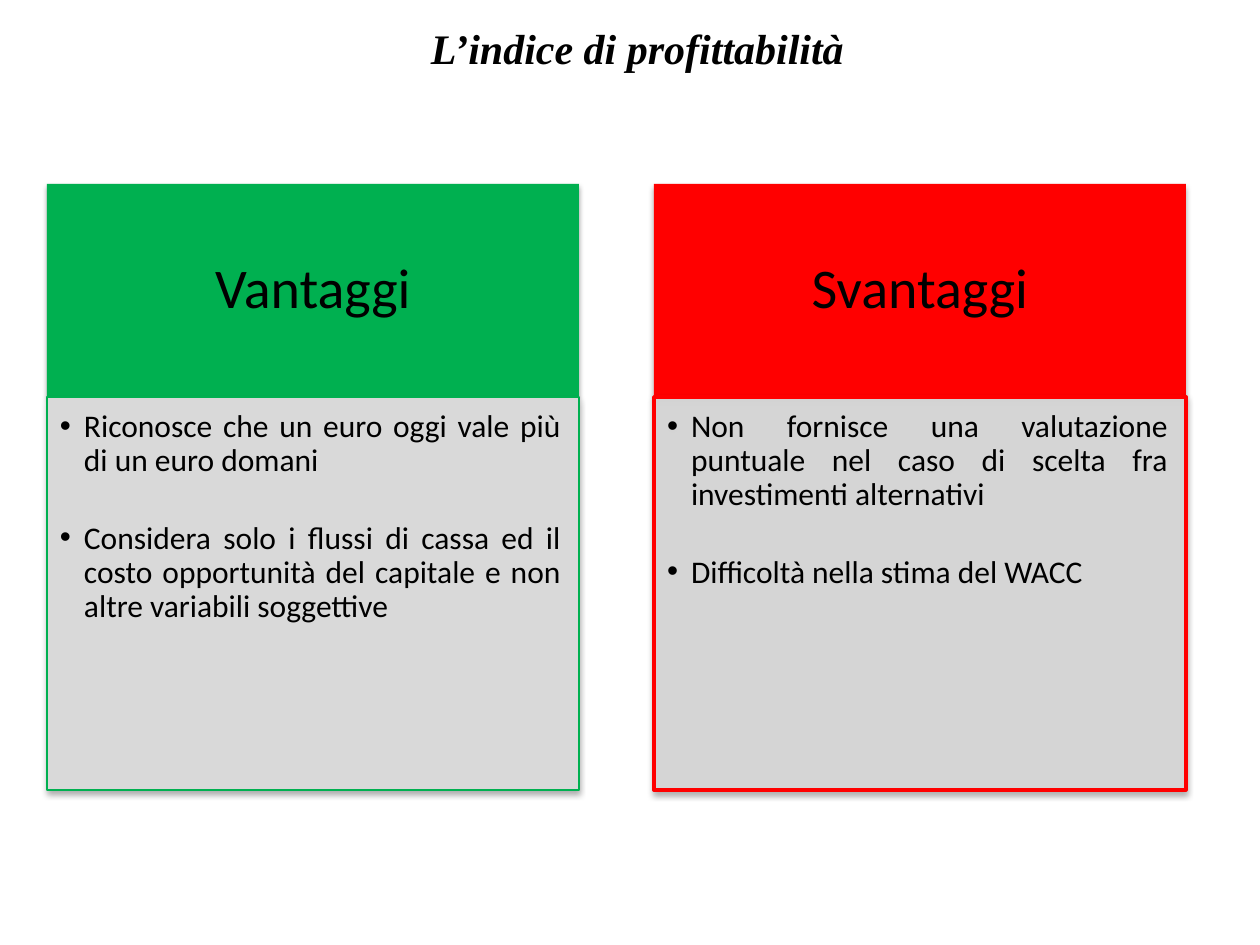
from dataclasses import dataclass
from typing import Any

from lxml import etree
from pptx import Presentation
from pptx.dml.color import RGBColor
from pptx.enum.shapes import MSO_SHAPE
from pptx.enum.text import MSO_ANCHOR, MSO_AUTO_SIZE, PP_ALIGN
from pptx.oxml.ns import qn
from pptx.util import Emu, Pt

RECT = MSO_SHAPE.RECTANGLE
TOP, MIDDLE = MSO_ANCHOR.TOP, MSO_ANCHOR.MIDDLE
CENTER, JUSTIFY = PP_ALIGN.CENTER, PP_ALIGN.JUSTIFY
NO_FIT = MSO_AUTO_SIZE.NONE
SCALE = 914400 / 126


@dataclass(frozen=True)
class Theme:
    ink: str = "000000"
    panel: str = "D9D9D9"
    green: str = "00B050"
    red: str = "FF0000"
    serif: str = "Times New Roman"
    sans: str = "Calibri"
    title: int = 24
    head: int = 32
    body: int = 18


@dataclass(frozen=True)
class Shade:
    alpha: int
    blur: float
    dist: float


@dataclass(frozen=True)
class Column:
    head: str
    items: tuple[str, ...]
    color: str
    line: float
    alpha: int
    shade: Shade


THEME = Theme()
SOFT = Shade(35, 3.1, 1.8)
DEEP = Shade(32, 3.5, 2.2)
LEFT, WIDTH, PITCH = 47, 532, 607
HEAD_TOP, HEAD_TALL, BODY_TALL = 184, 213, 393
HANG = 24
COLUMNS = (
    Column("Vantaggi", (
        "Riconosce che un euro oggi vale più di un euro domani",
        "Considera solo i flussi di cassa ed il costo opportunità del capitale "
        "e non altre variabili soggettive",
    ), THEME.green, 0.75, 100, SOFT),
    Column("Svantaggi", (
        "Non fornisce una valutazione puntuale nel caso di scelta fra "
        "investimenti alternativi",
        "Difficoltà nella stima del WACC",
    ), THEME.red, 2, 90, DEEP),
)


def px(count: int) -> Emu:
    return Emu(round(count * SCALE))


def apply(item: Any, form: dict[str, Any]) -> None:
    for name, value in form.items():
        setattr(item, name, value)


def place(shape: Any, left: int, top: int, width: int, height: int) -> None:
    apply(shape, {"left": px(left), "top": px(top),
                  "width": px(width), "height": px(height)})


def paint(fill: Any, color: str) -> None:
    fill.solid()
    fill.fore_color.rgb = RGBColor.from_string(color)


def shade(shape: Any, look: Shade) -> None:
    shape.shadow.inherit = False
    effect = shape.element.spPr.find(qn("a:effectLst"))
    outer = etree.SubElement(
        effect, qn("a:outerShdw"), blurRad=str(Pt(look.blur)),
        dist=str(Pt(look.dist)), dir="5400000", rotWithShape="0")
    color = etree.SubElement(outer, qn("a:srgbClr"), val=THEME.ink)
    etree.SubElement(color, qn("a:alpha"), val=str(look.alpha * 1000))


def write(shape: Any, lines: tuple[str, ...], font: dict[str, Any],
          para: dict[str, Any], anchor: Any, pad: tuple[int, ...]) -> None:
    frame = shape.text_frame
    sides = ("margin_left", "margin_top", "margin_right", "margin_bottom")
    apply(frame, {"word_wrap": True, "auto_size": NO_FIT,
                  "vertical_anchor": anchor, **dict(zip(sides, map(px, pad)))})
    frame.text = "\n".join(lines)
    for part in frame.paragraphs:
        apply(part, {"space_before": Pt(0), **para})
        run = part.runs[0].font
        apply(run, font)
        run.color.rgb = RGBColor.from_string(THEME.ink)


def bullet(part: Any) -> None:
    props = part._p.get_or_add_pPr()
    props.set("marL", str(px(HANG)))
    props.set("indent", str(-px(HANG)))
    etree.SubElement(props, qn("a:buChar"), char="•")


def draw_head(slide: Any, col: Column, left: int) -> None:
    box = slide.shapes.add_shape(RECT, 0, 0, 0, 0)
    place(box, left, HEAD_TOP, WIDTH, HEAD_TALL)
    paint(box.fill, col.color)
    box.line.fill.background()
    shade(box, col.shade)
    write(box, (col.head,), {"name": THEME.sans, "size": Pt(THEME.head)},
          {"alignment": CENTER, "line_spacing": 0.9}, MIDDLE, (32, 18, 32, 18))


def draw_body(body: Any, col: Column, left: int) -> None:
    body.element.getparent().append(body.element)
    place(body, left, HEAD_TOP + HEAD_TALL, WIDTH, BODY_TALL)
    paint(body.fill, THEME.panel)
    if col.alpha < 100:
        color = body.element.spPr.find(qn("a:solidFill"))[0]
        etree.SubElement(color, qn("a:alpha"), val=str(col.alpha * 1000))
    paint(body.line.fill, col.color)
    body.line.width = Pt(col.line)
    shade(body, DEEP)
    write(body, col.items, {"name": THEME.sans, "size": Pt(THEME.body)},
          {"alignment": JUSTIFY, "line_spacing": 0.9, "space_after": Pt(25)},
          TOP, (13, 13, 18, 20))
    for part in body.text_frame.paragraphs:
        bullet(part)


def main() -> None:
    deck = Presentation()
    apply(deck, {"slide_width": px(1260), "slide_height": px(945)})
    slide = deck.slides.add_slide(deck.slide_layouts[3])
    title, *bodies = list(slide.placeholders)
    place(title, LEFT, 16, 1181, 64)
    write(title, ("L’indice di profittabilità",),
          {"name": THEME.serif, "size": Pt(THEME.title),
           "bold": True, "italic": True},
          {"alignment": CENTER}, TOP, (13, 6, 13, 6))
    for spot, (col, body) in enumerate(zip(COLUMNS, bodies)):
        left = LEFT + spot * PITCH
        draw_head(slide, col, left)
        draw_body(body, col, left)
    deck.save("out.pptx")


if __name__ == "__main__":
    main()
